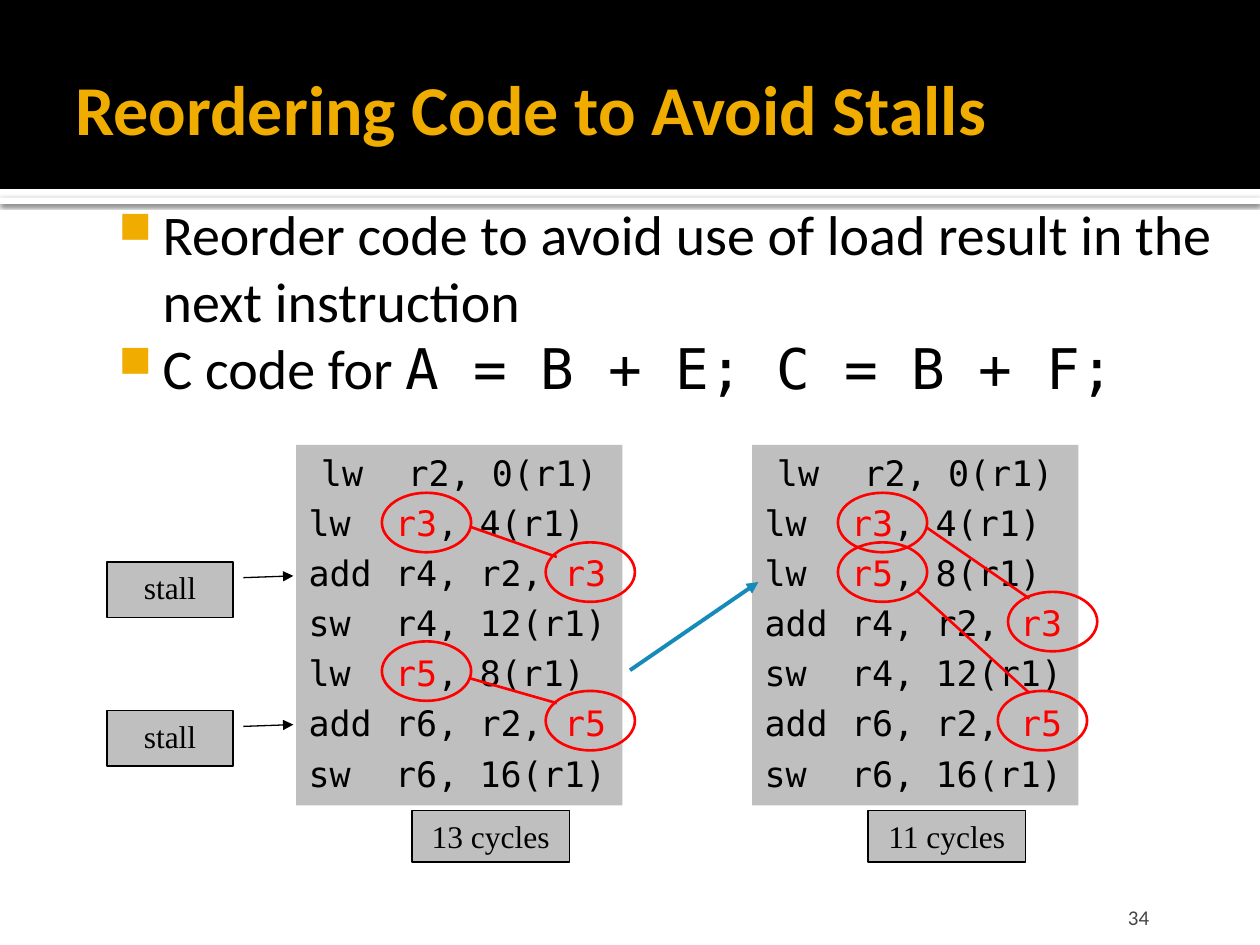
from dataclasses import dataclass

from lxml import etree
from pptx import Presentation
from pptx.dml.color import RGBColor
from pptx.enum import shapes, text
from pptx.oxml import ns
from pptx.util import Pt


@dataclass(frozen=True)
class Theme:
    """Colours, fonts and type sizes of the slide."""
    black: str = "000000"
    white: str = "FFFFFF"
    gold: str = "F0AD00"
    grey: str = "BFBFBF"
    red: str = "FF0000"
    blue: str = "168BBA"
    number: str = "454545"
    sans: str = "Calibri"
    mono: str = "DejaVu Sans Mono"
    serif: str = "Times New Roman"
    title_size: float = 40
    body_size: float = 32
    code_size: float = 20
    label_size: float = 18
    number_size: float = 12


THEME = Theme()
ROW_PITCH = 28.3
CODE_SIZE = (186.5, 206)
ELLIPSE_SIZE = (51, 34)


def add_xml(parent, tag, **attributes):
    """Append a DrawingML element to its parent."""
    return etree.SubElement(parent, ns.qn(tag), attributes)


def add_arrowhead(shape):
    """Put a triangle at the end of an outline."""
    line = shape.element.spPr.find(ns.qn("a:ln"))
    add_xml(line, "a:tailEnd", type="triangle")


def add_box(slide, box, fill=None, line=None, width=0.75, kind=shapes.MSO_SHAPE.RECTANGLE):
    """Draw a preset shape with the given fill and outline."""
    shape = slide.shapes.add_shape(kind, *map(Pt, box))
    shape.shadow.inherit = False
    if fill:
        shape.fill.solid()
        shape.fill.fore_color.rgb = RGBColor.from_string(fill)
    else:
        shape.fill.background()
    if line:
        shape.line.color.rgb = RGBColor.from_string(line)
        shape.line.width = Pt(width)
    else:
        shape.line.fill.background()
    return shape


def add_line(slide, points, color, width):
    """Draw a straight line between two points."""
    connector = slide.shapes.add_connector(shapes.MSO_CONNECTOR.STRAIGHT, *map(Pt, points))
    connector.line.color.rgb = RGBColor.from_string(color)
    connector.line.width = Pt(width)
    add_xml(connector.element.spPr, "a:effectLst")
    return connector


def set_frame(shape, insets=(7.2, 3.6, 7.2, 3.6), anchor=text.MSO_ANCHOR.TOP):
    """Set wrapping, insets and anchor, and return the text frame."""
    frame = shape.text_frame
    frame.word_wrap = True
    frame.vertical_anchor = anchor
    frame.margin_left, frame.margin_top, frame.margin_right, frame.margin_bottom = map(Pt, insets)
    return frame


def add_run(paragraph, words, size, font, color=THEME.black, bold=False):
    """Add one formatted run to a left-aligned paragraph."""
    paragraph.alignment = paragraph.alignment or text.PP_ALIGN.LEFT
    run = paragraph.add_run()
    run.text = words
    run.font.size = Pt(size)
    run.font.name = font
    run.font.bold = bold
    run.font.color.rgb = RGBColor.from_string(color)


def next_paragraph(frame, index):
    """Return the first paragraph or add a further one."""
    return frame.add_paragraph() if index else frame.paragraphs[0]


def add_header(slide, box):
    """Draw the black header, its shaded rule and the title."""
    left, top, width, height = box
    rule = add_box(slide, (left, top + height + 5, width, 3.6), THEME.white)
    effects = rule.element.spPr.find(ns.qn("a:effectLst"))
    shadow = add_xml(effects, "a:outerShdw", blurRad=str(Pt(2.5)), dist=str(Pt(0.8)),
                     dir="5400000", algn="tl", rotWithShape="0")
    color = add_xml(shadow, "a:srgbClr", val=THEME.black)
    add_xml(color, "a:alpha", val="60000")
    add_box(slide, box, THEME.black)
    title = slide.shapes.add_textbox(*map(Pt, (left + 36, top + 12.2, width - 72, 98.6)))
    frame = set_frame(title, (7.2, 3.6, 3.6, 3.6), text.MSO_ANCHOR.MIDDLE)
    add_run(frame.paragraphs[0], "Reordering Code to Avoid Stalls",
            THEME.title_size, THEME.sans, THEME.gold, True)


def add_body(slide, box, items):
    """Write the bulleted items, each a list of words and font."""
    frame = set_frame(slide.shapes.add_textbox(*map(Pt, box)), (4.3, 7.2, 7.2, 3.6))
    for index, item in enumerate(items):
        paragraph = next_paragraph(frame, index)
        for words, font in item:
            add_run(paragraph, words, THEME.body_size, font)
        properties = paragraph._p.get_or_add_pPr()
        properties.set("marL", str(Pt(34.6)))
        properties.set("indent", str(Pt(-25.2)))
        add_xml(add_xml(properties, "a:buClr"), "a:srgbClr", val=THEME.gold)
        add_xml(properties, "a:buSzPct", val="80000")
        add_xml(properties, "a:buChar", char="■")


def add_label(slide, box, words, kind=shapes.MSO_SHAPE.RECTANGLE):
    """Draw a grey bordered label."""
    shape = add_box(slide, box, THEME.grey, THEME.black, kind=kind)
    add_run(set_frame(shape).paragraphs[0], words, THEME.label_size, THEME.serif)
    return shape


def add_stall(slide, box):
    """Draw a stall label whose arrow points at the code."""
    callout = add_label(slide, box, "stall", shapes.MSO_SHAPE.LINE_CALLOUT_1)
    for index, value in enumerate((0.285, 1.083, 0.253, 1.479)):
        callout.adjustments[index] = value
    add_arrowhead(callout)


def add_code(slide, box, listing, cycles):
    """Write a listing, its starred registers in red, with the cycle count below."""
    left, top, _, height = box
    frame = set_frame(add_box(slide, box, THEME.grey))
    for index, instruction in enumerate(listing):
        paragraph = next_paragraph(frame, index)
        paragraph.space_after = Pt(4.66)
        for part, words in enumerate(instruction.split("*")):
            if words:
                add_run(paragraph, words, THEME.code_size, THEME.mono,
                        THEME.red if part % 2 else THEME.black)
        tabs = add_xml(paragraph._p.get_or_add_pPr(), "a:tabLst")
        add_xml(tabs, "a:tab", pos=str(Pt(49.5)), algn="l")
    add_label(slide, (left + 66.2, top + height + 2.9, 90, 29.5), cycles)


def add_hazards(slide, box, circles, links):
    """Circle registers by row and offset, and link the dependent ones."""
    left, top = box[:2]
    for row, offset in circles:
        place = (left + offset, top - 0.9 + ROW_PITCH * row)
        add_box(slide, place + ELLIPSE_SIZE, line=THEME.red, width=1.5,
                kind=shapes.MSO_SHAPE.OVAL)
    for x1, y1, x2, y2 in links:
        add_line(slide, (left + x1, top + y1, left + x2, top + y2), THEME.red, 1.5)


def add_number(slide, box, number):
    """Write the slide number."""
    frame = set_frame(slide.shapes.add_textbox(*map(Pt, box)), (7.2, 3.6, 7.2, 0),
                      text.MSO_ANCHOR.BOTTOM)
    frame.paragraphs[0].alignment = text.PP_ALIGN.RIGHT
    add_run(frame.paragraphs[0], number, THEME.number_size, THEME.sans, THEME.number)


def main():
    """Build the slide and save it."""
    presentation = Presentation()
    presentation.slide_width, presentation.slide_height = Pt(720), Pt(540)
    slide = presentation.slides.add_slide(presentation.slide_layouts[6])
    add_header(slide, (0, 0, 720, 108))
    add_body(slide, (54, 106.6, 651.6, 145.4), [
        [("Reorder code to avoid use of load result in the next instruction", THEME.sans)],
        [("C code for ", THEME.sans), ("A = B + E; C = B + F;", THEME.mono)],
    ])
    first, load3, add3, store4, load5, add5, store6 = (
        "lw\tr2, 0(r1)", "lw\t*r3*, 4(r1)", "add\tr4, r2, *r3*", "sw\tr4, 12(r1)",
        "lw\t*r5*, 8(r1)", "add\tr6, r2, *r5*", "sw\tr6, 16(r1)")
    before, after = ((left, 254.2) + CODE_SIZE for left in (169.2, 429.8))
    add_code(slide, before, (first, load3, add3, store4, load5, add5, store6), "13 cycles")
    add_code(slide, after, (first, load3, load5, add3, store4, add5, store6), "11 cycles")
    for top in (321.1, 406.1):
        add_stall(slide, (61.2, top, 72, 31.7))
    add_arrowhead(add_line(slide, (360, 383, 433.4, 332.6), THEME.blue, 2.25))
    add_hazards(slide, before, ((1, 49), (2, 142.6), (4, 49), (5, 142.6)),
                ((99.4, 46.8, 149, 64.1), (98.6, 133.2, 149, 147.6)))
    add_hazards(slide, after, ((1, 49), (3, 146.2), (5, 140.4), (2, 49)),
                ((100.1, 47.5, 158.4, 87.8), (94.3, 83.5, 158.4, 141.8)))
    add_number(slide, (606.2, 509.8, 57.6, 21.6), "34")
    presentation.save("out.pptx")


if __name__ == "__main__":
    main()
